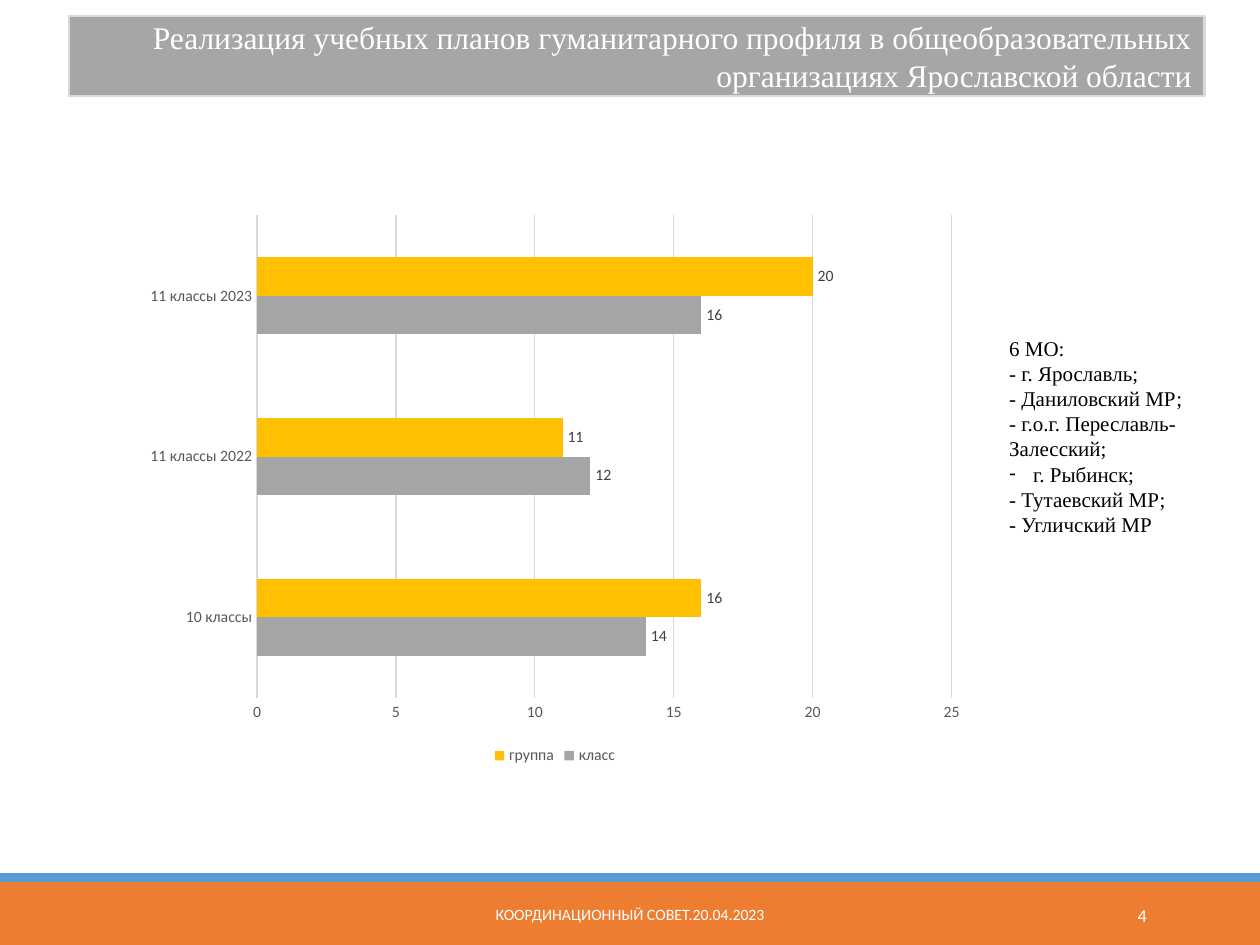
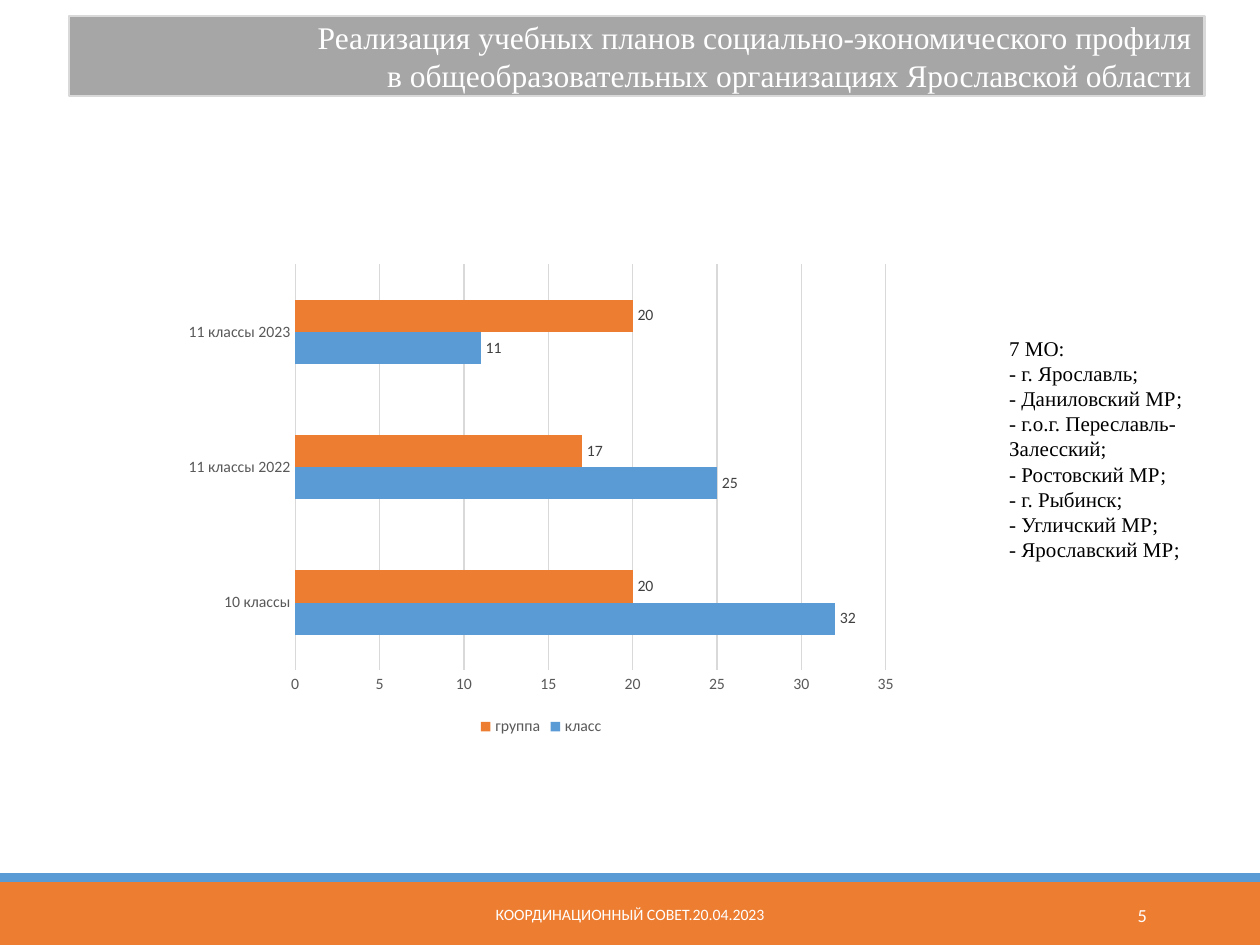
"""Build two slides on specialised study profiles in the schools of Yaroslavl region."""
from dataclasses import dataclass

from lxml.etree import SubElement
from pptx import Presentation
from pptx.chart.data import CategoryChartData
from pptx.dml.color import RGBColor
from pptx.enum.chart import XL_CHART_TYPE as ChartType
from pptx.enum.chart import XL_LABEL_POSITION as LabelPos
from pptx.enum.chart import XL_LEGEND_POSITION as LegendPos
from pptx.enum.chart import XL_TICK_MARK as Tick
from pptx.enum.shapes import MSO_SHAPE as Preset
from pptx.enum.text import MSO_ANCHOR as Anchor
from pptx.enum.text import MSO_AUTO_SIZE as AutoSize
from pptx.enum.text import PP_ALIGN as Align
from pptx.oxml.ns import qn
from pptx.util import Inches, Pt

WHITE = RGBColor(0xFF, 0xFF, 0xFF)
BLACK = RGBColor(0, 0, 0)
ORANGE = RGBColor(0xED, 0x7D, 0x31)
BLUE = RGBColor(0x5B, 0x9B, 0xD5)
GOLD = RGBColor(0xFF, 0xC0, 0x00)
GREY = RGBColor(0xA5, 0xA5, 0xA5)
TITLE_GREY = RGBColor(0xA6, 0xA6, 0xA6)
PALE = RGBColor(0xD9, 0xD9, 0xD9)
AXIS_TEXT = RGBColor(0x59, 0x59, 0x59)
LABEL_TEXT = RGBColor(0x40, 0x40, 0x40)

SERIF, SANS = "Times New Roman", "Calibri"
WIDTH, HEIGHT = Inches(10), Inches(7.5)
COLS, ROWS = 100, 75


@dataclass(frozen=True)
class Box:
    """A rectangle in columns and rows of the slide grid."""
    col: float
    row: float
    cols: float
    rows: float

    def emu(self) -> tuple[int, int, int, int]:
        """Return left, top, width and height in EMU."""
        return (round(self.col * WIDTH / COLS), round(self.row * HEIGHT / ROWS),
                round(self.cols * WIDTH / COLS), round(self.rows * HEIGHT / ROWS))


@dataclass(frozen=True)
class TextStyle:
    """Font and alignment of a paragraph."""
    name: str
    size: float
    color: RGBColor
    align: Align = Align.LEFT


@dataclass(frozen=True)
class Series:
    """One set of bars."""
    name: str
    values: tuple[int, ...]
    color: RGBColor


@dataclass(frozen=True)
class Profile:
    """The content of one slide."""
    number: int
    title: tuple[str, ...]
    places: tuple[str, ...]
    places_rows: float
    chart_box: Box
    axis_max: int
    series: tuple[Series, ...]
    bulleted: str = ""


TITLE_BOX = Box(5.5, 1.3, 90.1, 6.3)
FOOTER_BOX = Box(30.2, 70.6, 39.6, 4)
NUMBER_BOX = Box(81.2, 70.6, 10.8, 4)
BANDS = ((Box(0, 70, COLS, 5), ORANGE), (Box(0, 69.3, COLS, 0.7), BLUE))

TITLE = TextStyle(SERIF, 18, WHITE, Align.RIGHT)
BODY = TextStyle(SERIF, 12, BLACK)
FOOTER = TextStyle(SANS, 9, WHITE, Align.CENTER)
NUMBER = TextStyle(SANS, 10.5, WHITE, Align.RIGHT)
AXIS = TextStyle(SANS, 9, AXIS_TEXT)
LABEL = TextStyle(SANS, 9, LABEL_TEXT)

FOOTER_TEXT = "КООРДИНАЦИОННЫЙ СОВЕТ.20.04.2023"
GRADES = ("10 классы", "11 классы 2022", "11 классы 2023")
HANGING = Inches(0.19)

PROFILES = (
    Profile(
        4,
        ("Реализация учебных планов гуманитарного профиля в общеобразовательных "
         "организациях Ярославской области",),
        ("6 МО:", "- г. Ярославль;", "- Даниловский МР;",
         "- г.о.г. Переславль-Залесский;", "г. Рыбинск;",
         "- Тутаевский МР;", "- Угличский МР"),
        21.2, Box(10.6, 16.2, 66.9, 44.9), 25,
        (Series("класс", (14, 12, 16), GREY), Series("группа", (16, 11, 20), GOLD)),
        bulleted="г. Рыбинск;"),
    Profile(
        5,
        ("Реализация учебных планов социально-экономического профиля",
         "в общеобразовательных организациях Ярославской области"),
        ("7 МО:", "- г. Ярославль;", "- Даниловский МР;",
         "- г.о.г. Переславль-Залесский;", "- Ростовский МР;",
         "- г. Рыбинск;", "- Угличский МР;", "- Ярославский МР;"),
        23.2, Box(13.8, 20.2, 58.3, 38.6), 35,
        (Series("класс", (32, 25, 11), BLUE), Series("группа", (20, 17, 20), ORANGE))),
)


def apply(target, **values) -> None:
    """Set each named attribute of the target."""
    for name, value in values.items():
        setattr(target, name, value)


def style_font(font, style: TextStyle) -> None:
    """Give a font the name, size and colour of a style."""
    apply(font, name=style.name, size=Pt(style.size))
    font.color.rgb = style.color


def place(sp, box: Box) -> None:
    """Move a shape to a box of the grid."""
    apply(sp, **dict(zip(("left", "top", "width", "height"), box.emu())))


def write(tf, lines: tuple[str, ...], style: TextStyle, anchor: Anchor) -> None:
    """Fill a text frame with one paragraph per line."""
    apply(tf, word_wrap=True, auto_size=AutoSize.NONE, vertical_anchor=anchor,
          margin_left=Inches(0.1), margin_right=Inches(0.1),
          margin_top=Inches(0.05), margin_bottom=Inches(0.05))
    for i, line in enumerate(lines):
        p = tf.add_paragraph() if i else tf.paragraphs[0]
        apply(p, alignment=style.align, space_before=Pt(0))
        r = p.add_run()
        r.text = line
        style_font(r.font, style)


def set_bullet(p, char: str = "") -> None:
    """Give a paragraph a hanging bullet, or none."""
    pPr = p._p.get_or_add_pPr()
    indent = HANGING if char else 0
    pPr.set("marL", str(indent))
    pPr.set("indent", str(-indent))
    if char:
        SubElement(pPr, qn("a:buChar")).set("char", char)
    else:
        SubElement(pPr, qn("a:buNone"))


def add_bands(slide) -> None:
    """Draw the coloured bands at the foot of the slide."""
    for box, color in BANDS:
        sp = slide.shapes.add_shape(Preset.RECTANGLE, *box.emu())
        sp.shadow.inherit = False
        sp.fill.solid()
        sp.fill.fore_color.rgb = color
        sp.line.fill.background()


def add_title(slide, lines: tuple[str, ...]) -> None:
    """Write the title on its framed grey bar."""
    sp = slide.shapes.title
    place(sp, TITLE_BOX)
    sp.fill.solid()
    sp.fill.fore_color.rgb = TITLE_GREY
    sp.line.color.rgb = PALE
    sp.line.width = Pt(1.25)
    write(sp.text_frame, lines, TITLE, Anchor.MIDDLE)


def add_places(slide, profile: Profile) -> None:
    """List the municipalities beside the chart."""
    sp = slide.placeholders[1]
    place(sp, Box(79.1, 24.1, 18.9, profile.places_rows))
    tf = sp.text_frame
    write(tf, profile.places, BODY, Anchor.TOP)
    tf.margin_top = Inches(0.25)
    for p in tf.paragraphs:
        set_bullet(p, "-" if p.text == profile.bulleted else "")


def add_bars(slide, profile: Profile) -> None:
    """Draw the bar chart of classes and groups."""
    data = CategoryChartData()
    data.categories = GRADES
    for s in profile.series:
        data.add_series(s.name, s.values)
    chart = slide.shapes.add_chart(
        ChartType.BAR_CLUSTERED, *profile.chart_box.emu(), data).chart
    apply(chart, has_title=False, has_legend=True)
    style_font(chart.font, TextStyle(SANS, 10, BLACK))
    apply(chart.legend, position=LegendPos.BOTTOM, include_in_layout=False)
    style_font(chart.legend.font, AXIS)

    grades, counts = chart.category_axis, chart.value_axis
    for axis in (grades, counts):
        apply(axis, major_tick_mark=Tick.NONE, minor_tick_mark=Tick.NONE)
        style_font(axis.tick_labels.font, AXIS)
    apply(counts, minimum_scale=0, maximum_scale=profile.axis_max, major_unit=5,
          has_major_gridlines=True)
    counts.format.line.fill.background()
    for line in (grades.format.line, counts.major_gridlines.format.line):
        line.color.rgb = PALE
        line.width = Pt(0.75)

    plot = chart.plots[0]
    apply(plot, gap_width=219, vary_by_categories=False)
    for bars, s in zip(plot.series, profile.series):
        bars.format.fill.solid()
        bars.format.fill.fore_color.rgb = s.color
        labels = bars.data_labels
        apply(labels, show_value=True, position=LabelPos.OUTSIDE_END)
        style_font(labels.font, LABEL)


def add_footer(slide, number: int) -> None:
    """Write the footer and the slide number on the band."""
    for box, text, style in ((FOOTER_BOX, FOOTER_TEXT, FOOTER),
                             (NUMBER_BOX, str(number), NUMBER)):
        sp = slide.shapes.add_textbox(*box.emu())
        write(sp.text_frame, (text,), style, Anchor.MIDDLE)


def main() -> None:
    """Build and save the presentation."""
    prs = Presentation()
    apply(prs, slide_width=WIDTH, slide_height=HEIGHT)
    for profile in PROFILES:
        slide = prs.slides.add_slide(prs.slide_layouts[1])
        add_bands(slide)
        add_places(slide, profile)
        add_title(slide, profile.title)
        add_bars(slide, profile)
        add_footer(slide, profile.number)
    prs.save("out.pptx")


if __name__ == "__main__":
    main()
